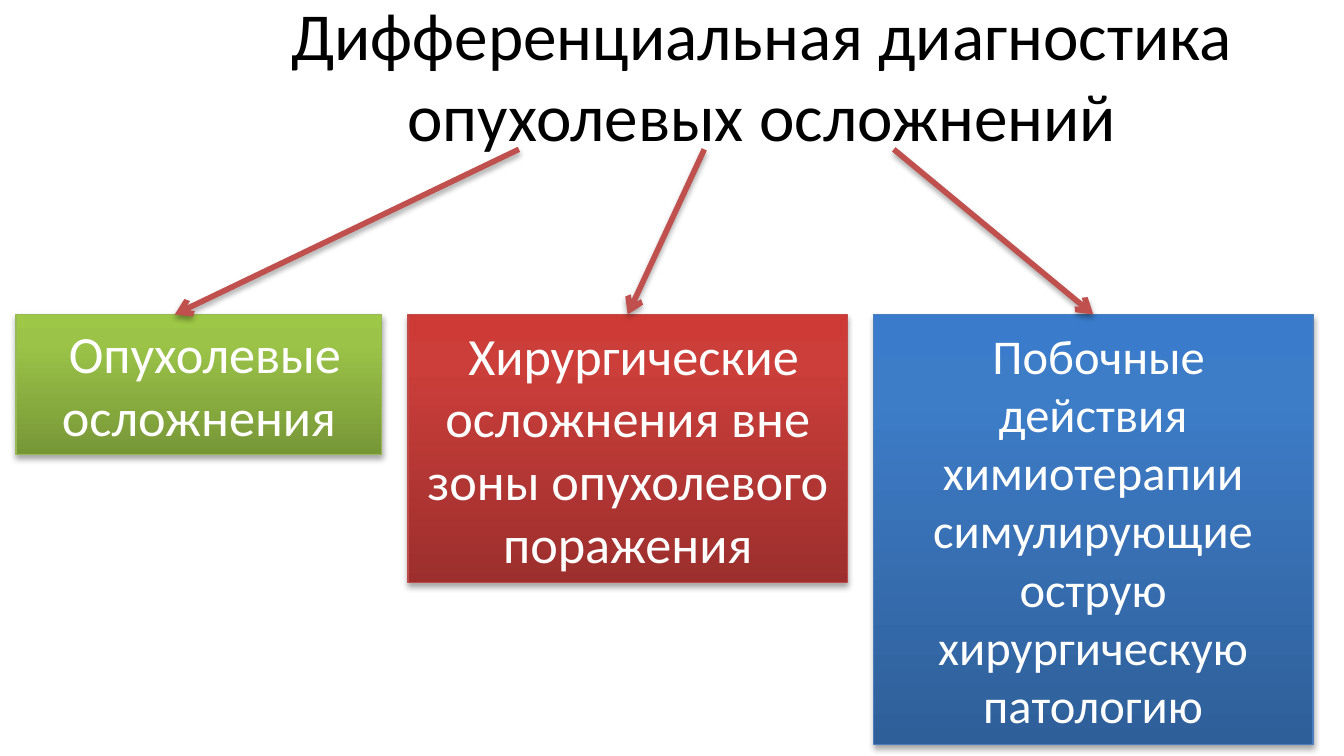
from lxml.etree import SubElement
from pptx import Presentation
from pptx.dml.color import RGBColor
from pptx.enum.shapes import MSO_CONNECTOR, MSO_SHAPE
from pptx.enum.text import MSO_ANCHOR, MSO_AUTO_SIZE, PP_ALIGN
from pptx.oxml import parse_xml
from pptx.oxml.ns import nsdecls, qn
from pptx.util import Pt

TITLE = "Дифференциальная диагностика опухолевых осложнений"
# arrow_start is the x of the arrow's tail; arrow_shift moves its head off the box centre
GROUPS = [
    dict(text=" Опухолевые осложнения", size=28, width=196, height=75,
         color="green", arrow_start=278, arrow_shift=-13),
    dict(text=" Хирургические осложнения вне зоны опухолевого поражения", size=28,
         width=235.4, height=143.5, color="red", arrow_start=377.3, arrow_shift=0),
    dict(text=" Побочные действия химиотерапии симулирующие острую хирургическую патологию",
         size=26, width=235.4, height=230.4, color="blue", arrow_start=478.8, arrow_shift=0),
]
THEME = dict(
    font="Calibri", title_size=36, title="000000", text="FFFFFF", arrow="C0504D",
    # gradient from bottom to top, then outline
    green=(("779737", "9BC348", "9DC746"), "98B955"),
    red=(("9C2F2D", "CB3E3A", "CE3B37"), "BF4C48"),
    blue=(("2F5F99", "3D7CC7", "3A7CCB"), "4B7EBC"),
)
STOPS = (0, 80, 100)
SLIDE_SIZE = (720, 405)
TITLE_BOX = (76.3, 6.5, 663.8, 66.2)
LEFT, TOP, GAP = 8.6, 168.5, 14
ARROW_TOP = 80


def rgb(value):
    return RGBColor.from_string(value)


def add_shadow(shape):
    """Add a soft shadow below; call it after the fill and the line are set."""
    shape._element.spPr.append(parse_xml(
        f'<a:effectLst {nsdecls("a")}><a:outerShdw blurRad="39370" dist="22860" dir="5400000" '
        'rotWithShape="0"><a:srgbClr val="000000"><a:alpha val="35000"/></a:srgbClr>'
        '</a:outerShdw></a:effectLst>'))


def fill_gradient(shape, colors):
    """Fill upwards with one colour for each of STOPS."""
    stops = "".join(f'<a:gs pos="{stop * 1000}"><a:srgbClr val="{color}"/></a:gs>'
                    for stop, color in zip(STOPS, colors))
    shape._element.spPr.find(qn("a:prstGeom")).addnext(parse_xml(
        f'<a:gradFill {nsdecls("a")} rotWithShape="1"><a:gsLst>{stops}</a:gsLst>'
        '<a:lin ang="16200000" scaled="0"/></a:gradFill>'))


def set_text(shape, text, size, color):
    frame = shape.text_frame
    frame.word_wrap = True
    frame.vertical_anchor = MSO_ANCHOR.MIDDLE
    paragraph = frame.paragraphs[0]
    paragraph.text = text
    paragraph.alignment = PP_ALIGN.CENTER
    paragraph.font.name = THEME["font"]
    paragraph.font.size = Pt(size)
    paragraph.font.color.rgb = rgb(color)


def add_box(slide, group, left):
    box = slide.shapes.add_shape(MSO_SHAPE.RECTANGLE, Pt(left), Pt(TOP),
                                 Pt(group["width"]), Pt(group["height"]))
    colors, outline = THEME[group["color"]]
    fill_gradient(box, colors)
    box.line.color.rgb = rgb(outline)
    box.line.width = Pt(0.75)
    add_shadow(box)
    set_text(box, group["text"], group["size"], THEME["text"])
    box.text_frame.auto_size = MSO_AUTO_SIZE.SHAPE_TO_FIT_TEXT


def add_arrow(slide, start, end):
    arrow = slide.shapes.add_connector(MSO_CONNECTOR.STRAIGHT, Pt(start), Pt(ARROW_TOP),
                                       Pt(end), Pt(TOP))
    arrow.line.color.rgb = rgb(THEME["arrow"])
    arrow.line.width = Pt(3)
    SubElement(arrow.line._get_or_add_ln(), qn("a:tailEnd"), type="arrow")
    add_shadow(arrow)


def main():
    presentation = Presentation()
    presentation.slide_width, presentation.slide_height = map(Pt, SLIDE_SIZE)
    slide = presentation.slides.add_slide(presentation.slide_layouts[6])

    title = slide.shapes.add_textbox(*map(Pt, TITLE_BOX))
    set_text(title, TITLE, THEME["title_size"], THEME["title"])

    left = LEFT
    arrows = []
    for group in GROUPS:
        add_box(slide, group, left)
        arrows.append((group["arrow_start"], left + group["width"] / 2 + group["arrow_shift"]))
        left += group["width"] + GAP
    for start, end in arrows:
        add_arrow(slide, start, end)

    presentation.save("out.pptx")


if __name__ == "__main__":
    main()
